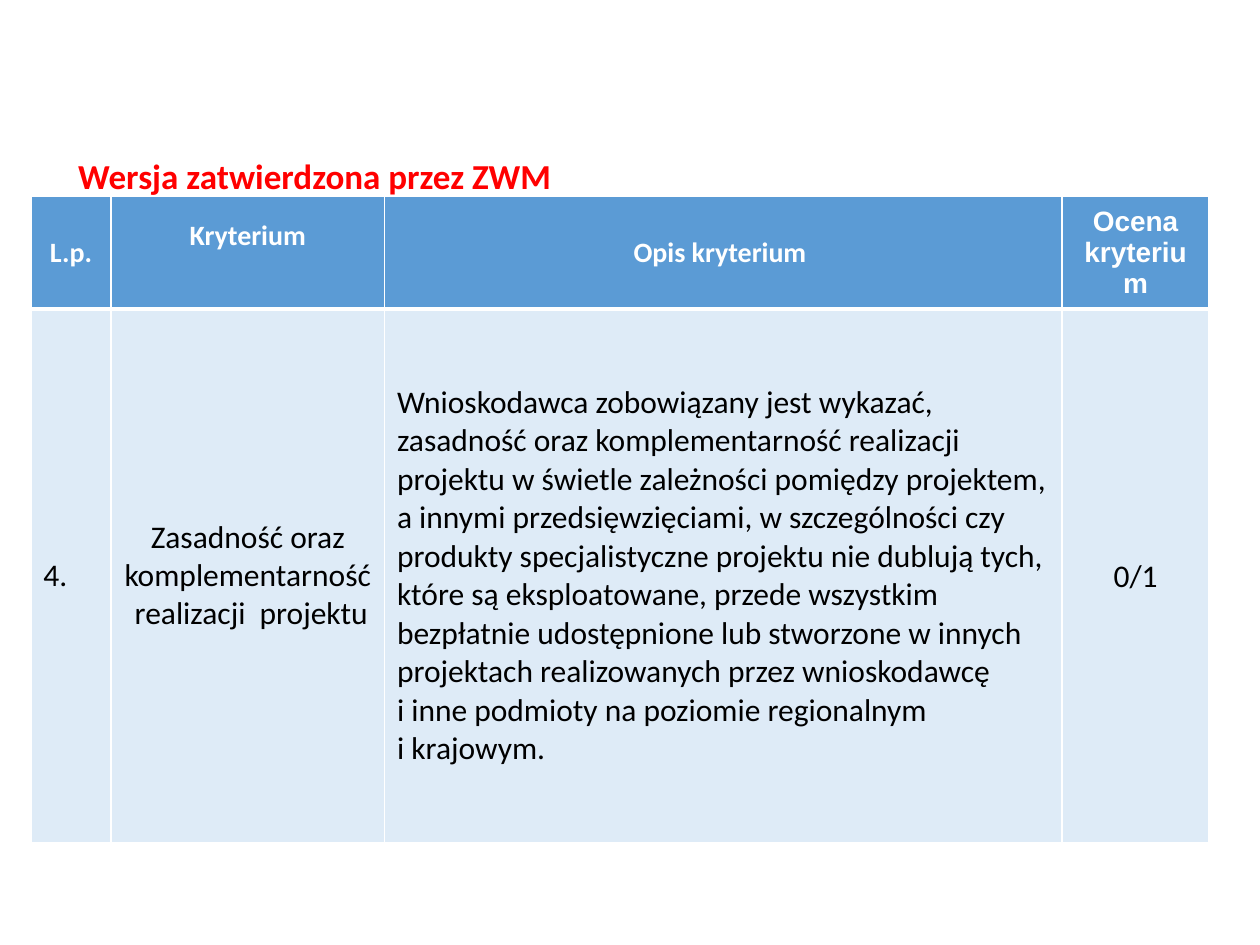
"""Build the slide with the approved assessment criterion table."""
from lxml import etree
from pptx import Presentation
from pptx.dml.color import RGBColor
from pptx.enum import text as t
from pptx.oxml import ns
from pptx.util import Pt

RED = RGBColor(0xFF, 0x00, 0x00)
WHITE = RGBColor(0xFF, 0xFF, 0xFF)
BLACK = RGBColor(0x00, 0x00, 0x00)
BLUE = RGBColor(0x5B, 0x9B, 0xD5)
PALE_BLUE = RGBColor(0xDE, 0xEB, 0xF7)

HEADING = "Wersja zatwierdzona przez ZWM"
HEADERS = ["L.p.", "Kryterium", "Opis kryterium ", "Ocena kryterium"]
CRITERION = [
    "4.",
    "Zasadność oraz komplementarność  realizacji  projektu",
    "Wnioskodawca zobowiązany jest wykazać, zasadność oraz komplementarność "
    "realizacji projektu w świetle zależności pomiędzy projektem, a innymi "
    "przedsięwzięciami, w szczególności czy produkty specjalistyczne projektu "
    "nie dublują tych, które są eksploatowane, przede wszystkim bezpłatnie "
    "udostępnione lub stworzone w innych projektach realizowanych przez "
    "wnioskodawcę \ni inne podmioty na poziomie regionalnym \ni krajowym.",
    "0/1",
]
COLUMN_WIDTHS = [45.9, 156.2, 387.2, 84.1]
ROW_HEIGHTS = [64.3, 304.8]
ROW_STYLES = [
    dict(size=16, color=WHITE, bold=True, fill=BLUE, borders=dict(L=1, R=1, T=1, B=3)),
    dict(size=18, color=BLACK, bold=False, fill=PALE_BLUE, borders=dict(L=1, R=1, T=3, B=1)),
]
LEFT_ALIGNED = {(1, 0), (1, 2)}


def add_text(paragraph, wording, size, color, bold, font="Calibri"):
    for index, line in enumerate(wording.split("\n")):
        if index:
            paragraph.add_line_break()
        run = paragraph.add_run()
        run.text = line
        run.font.name, run.font.size, run.font.bold = font, Pt(size), bold
        run.font.color.rgb = color


def add_borders(cell, widths):
    properties = cell._tc.get_or_add_tcPr()
    for side, width in widths.items():
        line = etree.SubElement(properties, ns.qn(f"a:ln{side}"), w=str(Pt(width)))
        solid = etree.SubElement(line, ns.qn("a:solidFill"))
        etree.SubElement(solid, ns.qn("a:srgbClr"), val=str(WHITE))


def fill_cell(cell, wording, style, centred, font):
    add_borders(cell, style["borders"])
    cell.fill.solid()
    cell.fill.fore_color.rgb = style["fill"]
    cell.vertical_anchor = t.MSO_ANCHOR.MIDDLE
    paragraph = cell.text_frame.paragraphs[0]
    paragraph.alignment = t.PP_ALIGN.CENTER if centred else t.PP_ALIGN.LEFT
    add_text(paragraph, wording, style["size"], style["color"], style["bold"], font)


def add_heading(slide):
    heading = slide.shapes.title
    heading.left, heading.top, heading.width, heading.height = Pt(37.4), Pt(84.5), Pt(301), Pt(31.5)
    frame = heading.text_frame
    frame.auto_size = t.MSO_AUTO_SIZE.NONE
    frame.word_wrap = True
    frame.vertical_anchor = t.MSO_ANCHOR.MIDDLE
    frame.paragraphs[0].alignment = t.PP_ALIGN.LEFT
    add_text(frame.paragraphs[0], HEADING, 20, RED, True)


def add_criteria(slide):
    criteria = slide.shapes.add_table(
        2, len(HEADERS), Pt(17.6), Pt(112.3), Pt(sum(COLUMN_WIDTHS)), Pt(sum(ROW_HEIGHTS))
    ).table
    for column, width in zip(criteria.columns, COLUMN_WIDTHS):
        column.width = Pt(width)
    for row, (wordings, style) in enumerate(zip([HEADERS, CRITERION], ROW_STYLES)):
        criteria.rows[row].height = Pt(ROW_HEIGHTS[row])
        for column, wording in enumerate(wordings):
            font = "Arial" if (row, column) == (0, 3) else "Calibri"
            centred = (row, column) not in LEFT_ALIGNED
            fill_cell(criteria.cell(row, column), wording, style, centred, font)
    criteria.cell(0, 1).margin_bottom = Pt(22.5)
    score = criteria.cell(1, 3)
    score.margin_left = score.margin_right = score.margin_top = score.margin_bottom = Pt(2.9)
    score.text_frame.paragraphs[0].line_spacing = 1.07


def main():
    deck = Presentation()
    deck.slide_width, deck.slide_height = Pt(720), Pt(540)
    slide = deck.slides.add_slide(deck.slide_layouts[5])
    add_heading(slide)
    add_criteria(slide)
    deck.save("out.pptx")


if __name__ == "__main__":
    main()
